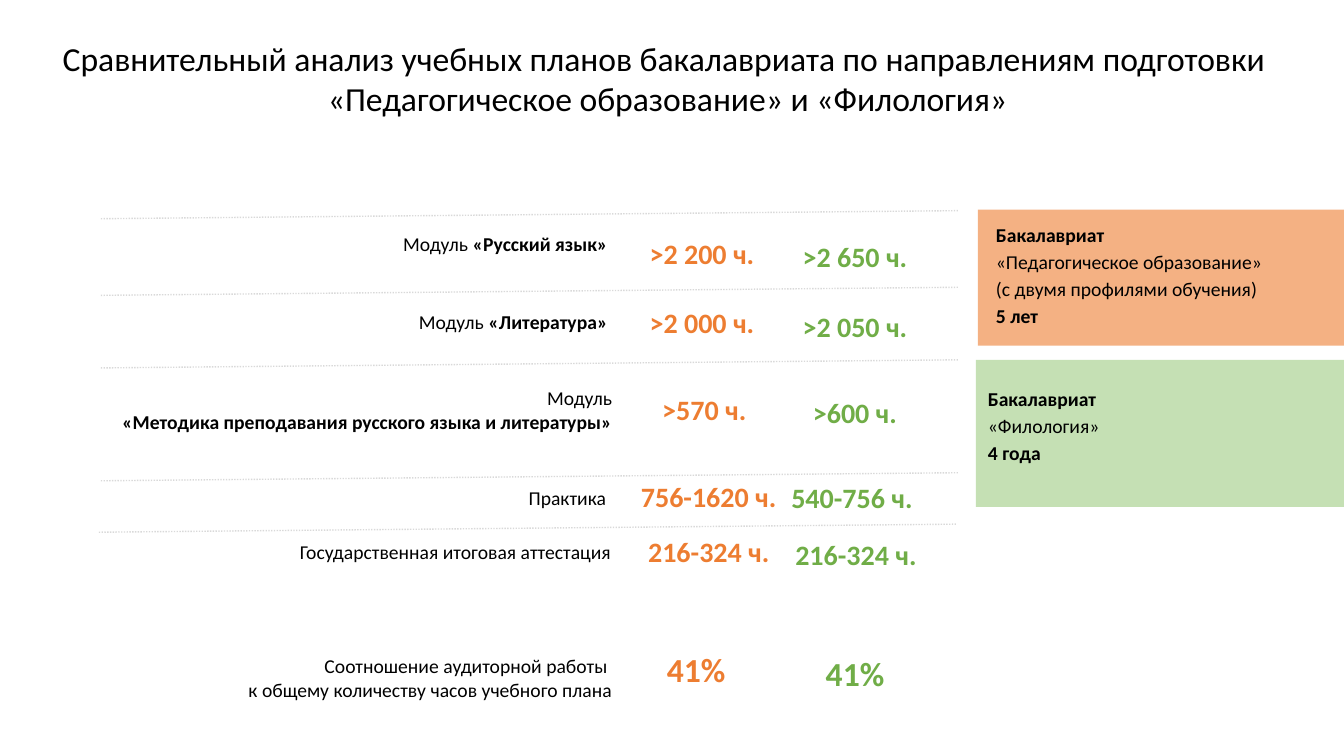
import pptx
import pptx.util
import pptx.dml.color
import pptx.enum.dml
import pptx.enum.shapes
import pptx.enum.text
import pptx.oxml.ns
import lxml.etree

Inches = pptx.util.Inches
ALIGN = pptx.enum.text.PP_ALIGN
ORANGE, GREEN = "ED7D31", "70AD47"


def color(hex_value):
    return pptx.dml.color.RGBColor.from_string(hex_value)


def write(frame, lines, size, hex_value, align, bold=(), loose=False):
    """One paragraph of lines; each line is a list of pieces, bold holds run numbers."""
    paragraph = frame.paragraphs[0]
    paragraph.alignment = align
    for number, pieces in enumerate(lines):
        if number:
            paragraph.add_line_break()
        for piece in pieces:
            paragraph.add_run().text = piece
    for number, run in enumerate(paragraph.runs):
        run.font.name = "Calibri"
        run.font.size = pptx.util.Pt(size)
        run.font.bold = number in bold
        run.font.color.rgb = color(hex_value)
    if loose:
        paragraph.line_spacing = 1.15
        paragraph.space_after = pptx.util.Pt(10)
    frame.auto_size = pptx.enum.text.MSO_AUTO_SIZE.SHAPE_TO_FIT_TEXT


deck = pptx.Presentation()
deck.slide_width, deck.slide_height = Inches(13.33), Inches(7.5)
slide = deck.slides.add_slide(deck.slide_layouts[5])
shapes = slide.shapes

# Title
title = shapes.title
title.left, title.top, title.width, title.height = map(Inches, (-0.5, 0.32, 14.17, 0.91))
title.text_frame.vertical_anchor = pptx.enum.text.MSO_ANCHOR.MIDDLE
write(title.text_frame,
      [["Сравнительный анализ учебных планов бакалавриата по направлениям подготовки"],
       [" «Педагогическое образование» и «Филология»"]],
      24, "000000", ALIGN.CENTER)

# Programme legend: panel box, panel colour, text box, lines, bold lines
programmes = [
    ((9.7, 2.08, 3.64, 1.35), "F4B183", (9.78, 2.13, 6.67, 1.46),
     [["Бакалавриат "], ["«Педагогическое образование» "],
      ["(с двумя профилями обучения)"], ["5 лет"]], (0, 3)),
    ((9.68, 3.57, 3.66, 1.46), "C5E0B4", (9.7, 3.75, 7.16, 1.19),
     [["Бакалавриат"], ["«Филология» "], ["4 года"]], (0, 2)),
]
for panel_box, fill, text_box, lines, bold in programmes:
    panel = shapes.add_shape(pptx.enum.shapes.MSO_SHAPE.RECTANGLE, *map(Inches, panel_box))
    panel.shadow.inherit = False
    panel.fill.solid()
    panel.fill.fore_color.rgb = color(fill)
    panel.line.fill.background()
    legend = shapes.add_textbox(*map(Inches, text_box)).text_frame
    legend.word_wrap = True
    write(legend, lines, 14, "000000", ALIGN.LEFT, bold, loose=True)

# Dotted row rules, all rising slightly to the right
for left, top in [(1, 2.09), (1, 2.85), (1, 3.57), (1, 4.69), (0.98, 5.2)]:
    rule = shapes.add_connector(pptx.enum.shapes.MSO_CONNECTOR.STRAIGHT, Inches(left),
                                Inches(top + 0.08), Inches(left + 8.5), Inches(top))
    rule.line.color.rgb = color("D9D9D9")
    rule.line.width = pptx.util.Pt(1)
    rule.line.dash_style = pptx.enum.dml.MSO_LINE.ROUND_DOT
    lxml.etree.SubElement(rule._element.spPr, pptx.oxml.ns.qn("a:effectLst"))

# Rows: label left, label top, lines, bold runs, size, then per programme
# (hours, centre, top, loose line spacing)
rows = [
    (-0.5, 2.25, [["Модуль", " «Русский язык» "]], (1,), 20,
     (">2 200 ч.", 6.97, 2.3, False), (">2 650 ч.", 8.48, 2.28, True)),
    (-0.5, 3.03, [["Модуль", " «Литература» "]], (1,), 20,
     (">2 000 ч.", 6.97, 2.98, False), (">2 050 ч.", 8.48, 2.97, True)),
    (-0.5, 3.78, [["Модуль"], ["«Методика преподавания русского языка и литературы»"]], (1,), 20,
     (">570 ч.", 6.99, 3.84, False), (">600 ч.", 8.48, 3.82, True)),
    (-0.56, 4.77, [["Практика"]], (), 20,
     ("756-1620 ч.", 7.03, 4.66, True), ("540-756 ч.", 8.45, 4.67, True)),
    (-0.51, 5.31, [["Государственная итоговая аттестация"]], (), 20,
     ("216-324 ч.", 7.03, 5.2, True), ("216-324 ч.", 8.49, 5.23, True)),
    (-0.5, 6.44, [["Соотношение аудиторной работы "],
                  ["к общему количеству часов учебного плана"]], (), 24,
     ("41%", 6.91, 6.39, False), ("41%", 8.48, 6.37, True)),
]
hours_widths = {"41%": 0.79, ">570 ч.": 1.04, ">600 ч.": 1.04,
                ">2 200 ч.": 1.25, ">2 650 ч.": 1.25, ">2 000 ч.": 1.25,
                ">2 050 ч.": 1.25, "756-1620 ч.": 1.56}
for left, top, lines, bold, size, *programme_hours in rows:
    label_height = 0.34 if len(lines) == 1 else 0.57
    label = shapes.add_textbox(*map(Inches, (left, top, 6.67, label_height))).text_frame
    label.word_wrap = True
    write(label, lines, 14, "000000", ALIGN.RIGHT, bold)
    for (hours, centre, hours_top, loose), tint in zip(programme_hours, (ORANGE, GREEN)):
        width = hours_widths.get(hours, 1.42)
        height = (0.47 if loose else 0.44) + (0.07 if size == 24 else 0)
        value = shapes.add_textbox(
            *map(Inches, (centre - width / 2, hours_top, width, height))).text_frame
        value.word_wrap = False
        write(value, [[hours]], size, tint, ALIGN.CENTER if loose else ALIGN.LEFT, (0,), loose)

deck.save("out.pptx")
